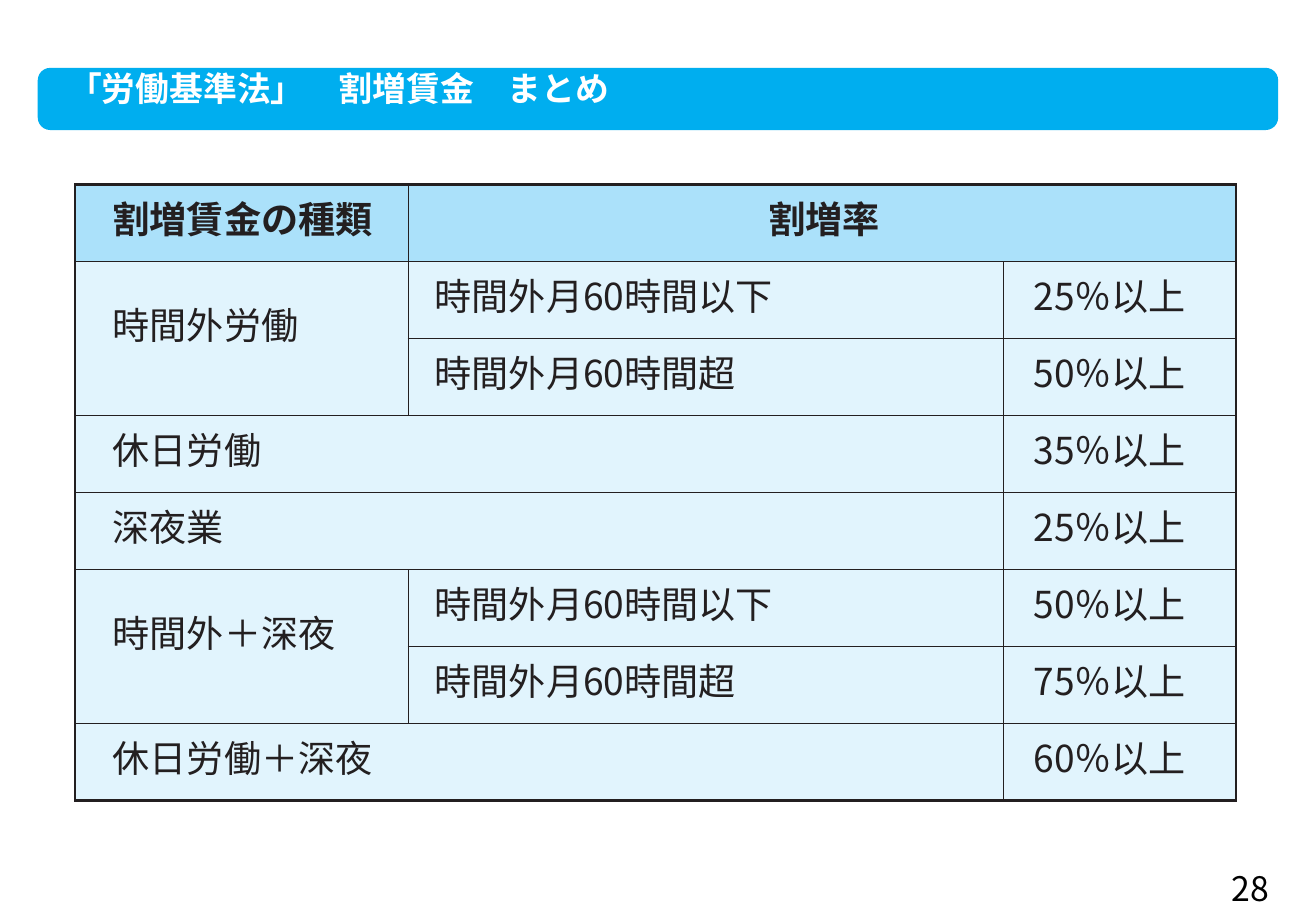
from lxml.etree import SubElement
from pptx import Presentation
from pptx.dml.color import RGBColor
from pptx.enum.shapes import MSO_SHAPE
from pptx.enum.text import MSO_ANCHOR, PP_ALIGN
from pptx.oxml.ns import qn
from pptx.util import Cm, Pt

FONT = "Noto Sans CJK JP"
INK = "231F20"
COLS = (6.96, 12.44, 4.87)
INDENTS = (0.79, 0.56, 0.64)
UNDER, OVER = "時間外月60時間以下", "時間外月60時間超"
# None marks a cell covered by the merged cell to its left or above
ROWS = [
    ("割増賃金の種類", "割増率", None),
    ("時間外労働", UNDER, "25％以上"),
    (None, OVER, "50％以上"),
    ("休日労働", None, "35％以上"),
    ("深夜業", None, "25％以上"),
    ("時間外＋深夜", UNDER, "50％以上"),
    (None, OVER, "75％以上"),
    ("休日労働＋深夜", None, "60％以上"),
]


def rgb(color):
    return RGBColor.from_string(color)


def write(tf, text, size=22, color=INK, bold=False, align=PP_ALIGN.LEFT):
    p = tf.paragraphs[0]
    p.alignment = align
    r = p.add_run()
    r.text = text
    r.font.size = Pt(size)
    r.font.bold = bold
    r.font.name = FONT
    r.font.color.rgb = rgb(color)
    SubElement(r.font._element, qn("a:ea"), typeface=FONT)


def add_banner(s, x, y, w, h, text):
    sp = s.shapes.add_shape(MSO_SHAPE.ROUNDED_RECTANGLE, Cm(x), Cm(y), Cm(w), Cm(h))
    sp.adjustments[0] = 0.2
    sp.shadow.inherit = False
    sp.fill.solid()
    sp.fill.fore_color.rgb = rgb("00AEEF")
    sp.line.fill.background()
    tf = sp.text_frame
    tf.word_wrap = True
    tf.vertical_anchor = MSO_ANCHOR.TOP
    tf.margin_left, tf.margin_top = Cm(0.56), Cm(-0.07)
    tf.margin_right = tf.margin_bottom = 0
    write(tf, text, size=20, color="FFFFFF", bold=True)


def set_borders(cell, **widths):
    tcPr = cell._tc.get_or_add_tcPr()
    for side in "LRTB":
        ln = SubElement(tcPr, qn(f"a:ln{side}"), w=str(Pt(widths[side])))
        fill = SubElement(ln, qn("a:solidFill"))
        SubElement(fill, qn("a:srgbClr"), val=INK)


def add_rate_table(s, x, y, w, h):
    n, m = len(ROWS), len(COLS)
    frame = s.shapes.add_table(n, m, Cm(x), Cm(y), Cm(w), Cm(h))
    table = frame.table
    for col, width in zip(table.columns, COLS):
        col.width = Cm(width * w / sum(COLS))
    for row in table.rows:
        row.height = Cm(h / n)

    for i, row in enumerate(ROWS):
        for j, text in enumerate(row):
            if text is None:
                start = (i - 1, j) if j == 0 else (i, j - 1)
                table.cell(*start).merge(table.cell(i, j))

    for i, row in enumerate(ROWS):
        for j, text in enumerate(row):
            cell = table.cell(i, j)
            last_row = i + (cell.span_height if cell.is_merge_origin else 1)
            last_col = j + (cell.span_width if cell.is_merge_origin else 1)
            set_borders(cell,
                        L=1.5 if j == 0 else 0.5, R=1.5 if last_col == m else 0.5,
                        T=1.5 if i == 0 else 0.5, B=1.5 if last_row == n else 0.5)
            cell.fill.solid()
            cell.fill.fore_color.rgb = rgb("ABE1FA" if i == 0 else "E1F4FD")
            if text is None:
                continue
            centred = i == 0 and j == 1
            cell.margin_left = Cm(0.08 if centred else INDENTS[j])
            cell.margin_top = Cm(0.73 if last_row - i == 2 else 0.13)
            cell.margin_right = cell.margin_bottom = 0
            write(cell.text_frame, text, bold=i == 0,
                  align=PP_ALIGN.CENTER if centred else PP_ALIGN.LEFT)


def add_page_number(s, x, y, w, h, text):
    tf = s.shapes.add_textbox(Cm(x), Cm(y), Cm(w), Cm(h)).text_frame
    tf.word_wrap = True
    write(tf, text, size=20, color="000000")


def main():
    prs = Presentation()
    prs.slide_width, prs.slide_height = Cm(27.51), Cm(19.05)
    s = prs.slides.add_slide(prs.slide_layouts[6])
    add_rate_table(s, 1.57, 3.86, 24.27, 12.88)
    add_banner(s, 0.79, 1.42, 25.93, 1.3, "「労働基準法」　割増賃金　まとめ")
    add_page_number(s, 25.5, 18.03, 2.01, 1.02, "28")
    prs.save("out.pptx")


if __name__ == "__main__":
    main()
